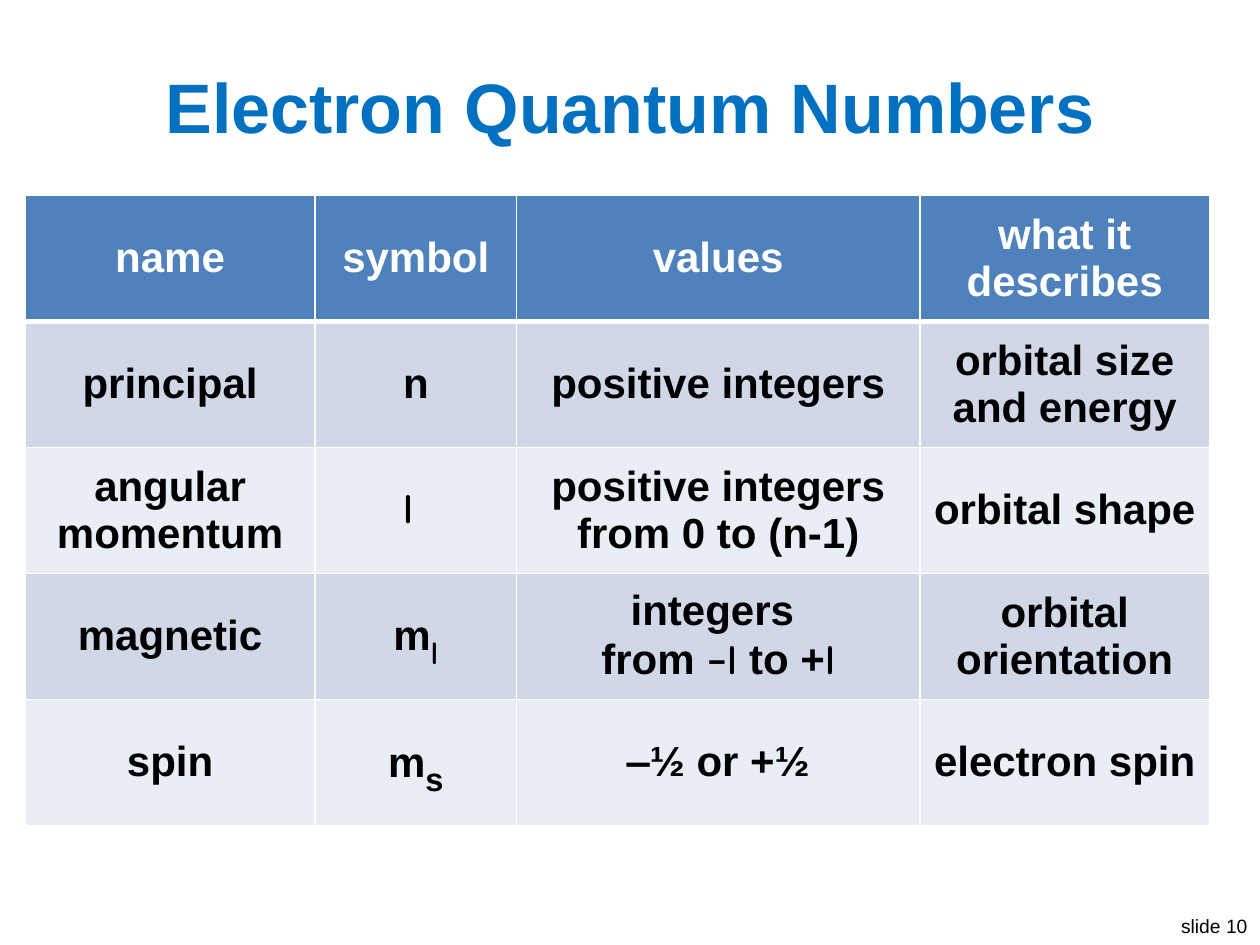
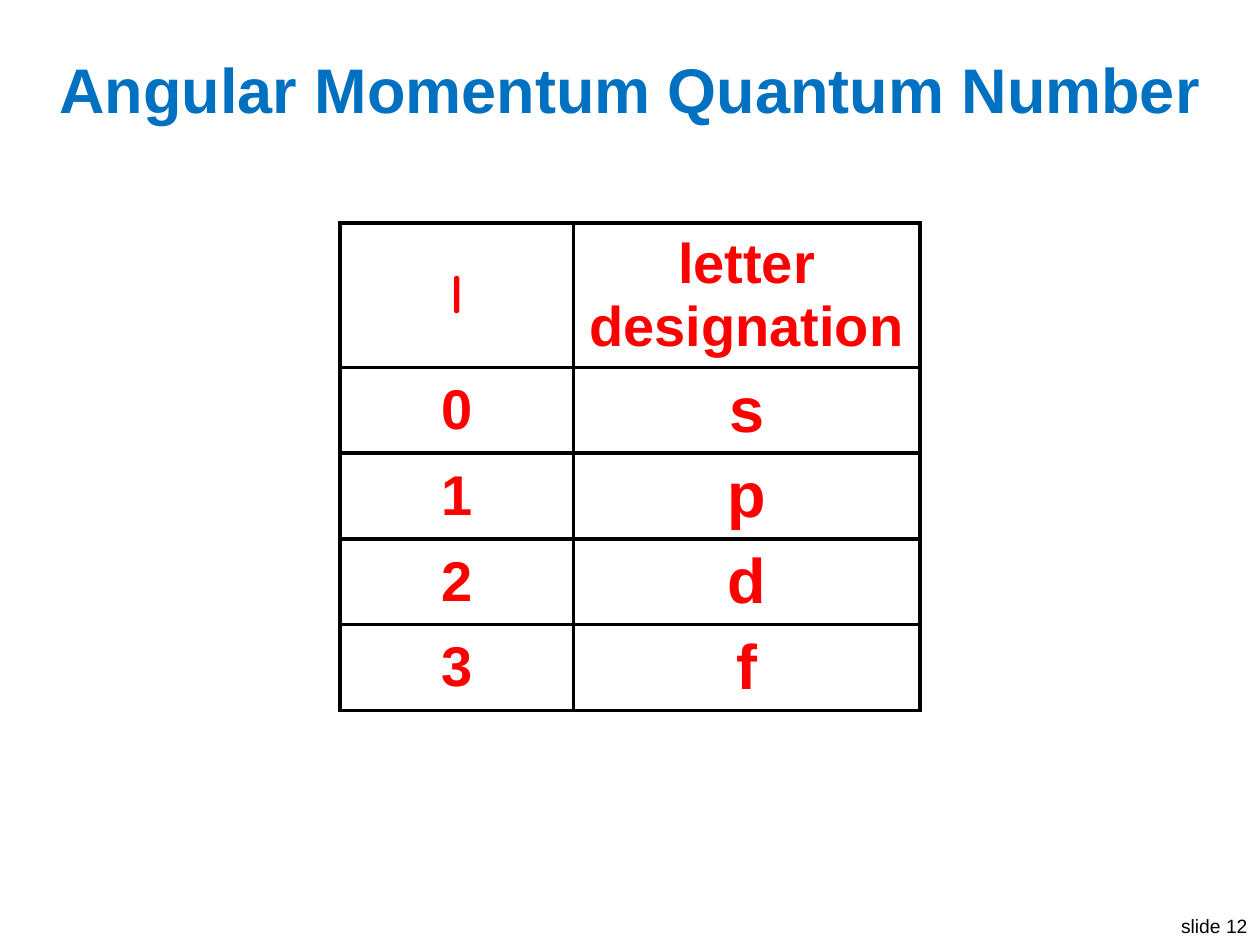
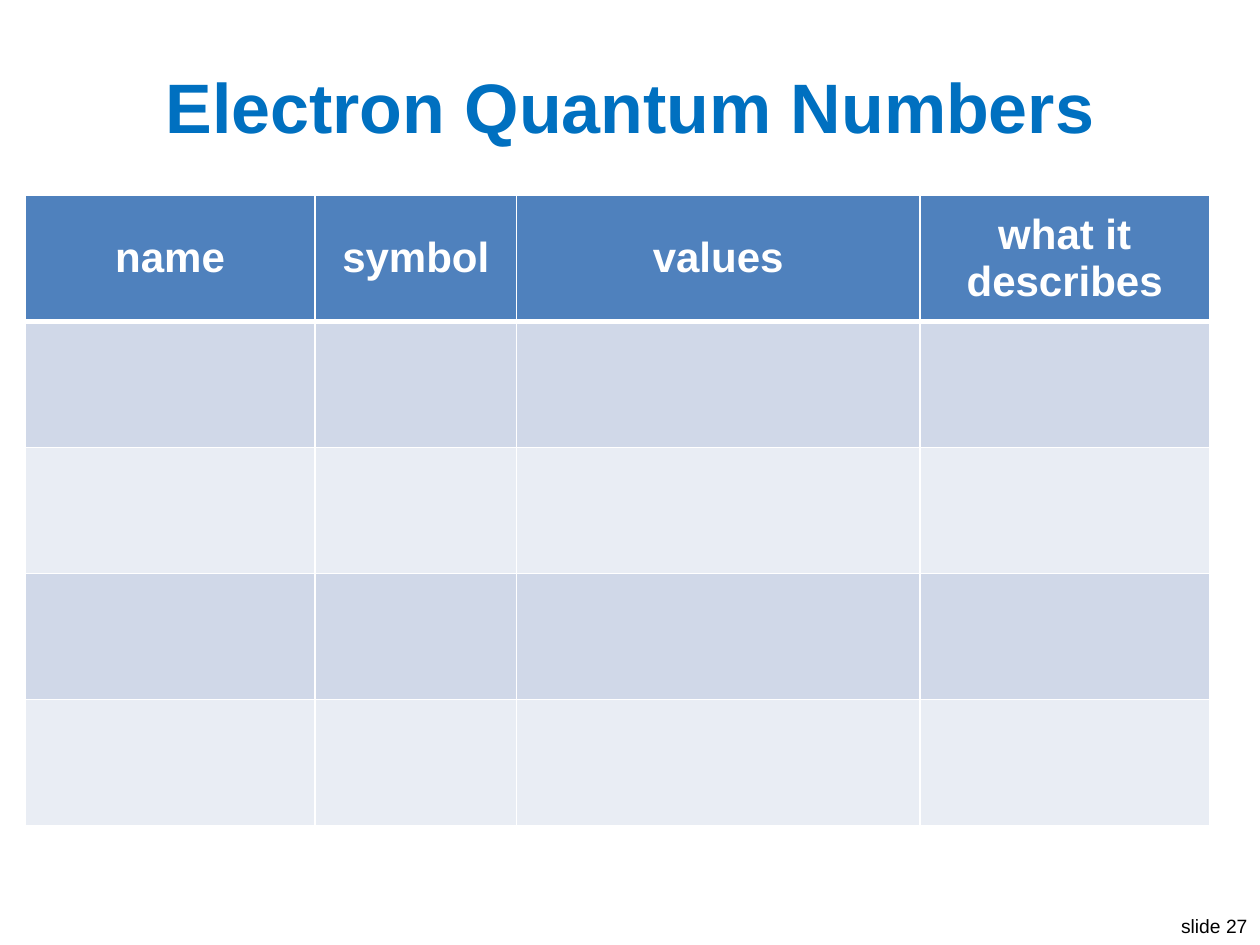
from lxml.etree import SubElement
from pptx import Presentation
from pptx.dml.color import RGBColor
from pptx.enum.text import MSO_ANCHOR as Anchor, MSO_AUTO_SIZE as AutoSize, PP_ALIGN as Align
from pptx.oxml.ns import qn
from pptx.util import Inches, Pt

# Shared look
BLACK, WHITE, RED = "000000", "FFFFFF", "FF0000"
TITLE_BLUE, HEADER_BLUE = "0070C0", "4F81BD"
BANDS = ["D0D8E8", "E9EDF4"]
BODY_FONT, LETTER_FONT, DASH_FONT = "Arial", "Comic Neue", "Calibri"
TITLE_ONLY = 5

# Marked pieces of text: (text, format that differs from its surroundings)
ELL = ("l", {"font": LETTER_FONT})
SUBSCRIPT = {"size": 32, "baseline": -25}

HEADINGS = ["name", "symbol", "values", "what it describes"]
QUANTUM_NUMBERS = [
    ["principal", "n", "positive integers", "orbital size and energy"],
    ["angular momentum", [[("l ", {"font": LETTER_FONT})]],
     "positive integers from 0 to (n-1)", "orbital shape"],
    ["magnetic", [["m", ("l", {"font": LETTER_FONT, **SUBSCRIPT})]],
     [["integers "], ["from ", ("‒", {"font": DASH_FONT}), ELL, " to +", ELL]],
     "orbital orientation"],
    ["spin", [["m", ("s", SUBSCRIPT)]], "‒½ or +½", "electron spin"],
]
LETTERS = "spdf"


def rgb(value):
    return RGBColor.from_string(value)


def write(frame, content, align=Align.CENTER, **style):
    """Write a string, or paragraphs that are lists of plain or marked pieces."""
    paragraphs = [[content]] if isinstance(content, str) else content
    for number, pieces in enumerate(paragraphs):
        paragraph = frame.add_paragraph() if number else frame.paragraphs[0]
        paragraph.alignment = align
        for piece in pieces:
            text, changes = (piece, {}) if isinstance(piece, str) else piece
            add_run(paragraph, text, **{**style, **changes})


def add_run(paragraph, text, size=24, font=BODY_FONT, color=BLACK, bold=True, baseline=0):
    run = paragraph.add_run()
    run.text = text
    run.font.size, run.font.name, run.font.bold = Pt(size), font, bold
    run.font.color.rgb = rgb(color)
    if baseline:
        run.font._element.set("baseline", str(baseline * 1000))


def set_borders(cell, color, width, bottom=None):
    properties = cell._tc.get_or_add_tcPr()
    for side in "LRTB":
        points = bottom if side == "B" and bottom else width
        line = SubElement(properties, qn(f"a:ln{side}"), w=str(Pt(points)))
        fill = SubElement(line, qn("a:solidFill"))
        SubElement(fill, qn("a:srgbClr"), val=color)


def add_grid(slide, left, top, widths, heights):
    table = slide.shapes.add_table(
        len(heights), len(widths), Inches(left), Inches(top),
        Inches(sum(widths)), Inches(sum(heights))).table
    table.first_row = table.horz_banding = False
    for column, width in zip(table.columns, widths):
        column.width = Inches(width)
    for row, height in zip(table.rows, heights):
        row.height = Inches(height)
    for cell in table.iter_cells():
        cell.vertical_anchor = Anchor.MIDDLE
    return table


def add_titled_slide(deck, heading, page, top, size):
    slide = deck.slides.add_slide(deck.slide_layouts[TITLE_ONLY])
    # Title
    title = slide.shapes.title
    title.left, title.top = Inches(0.2), Inches(top)
    title.width, title.height = Inches(9.6), Inches(0.8)
    frame = title.text_frame
    frame.auto_size, frame.vertical_anchor = AutoSize.NONE, Anchor.MIDDLE
    write(frame, heading, size=size, color=TITLE_BLUE)
    # Page label in the bottom right corner
    label = slide.shapes.add_textbox(Inches(9.25), Inches(7.21), Inches(0.75), Inches(0.29))
    label.text_frame.word_wrap = False
    write(label.text_frame, f"slide {page}", align=Align.RIGHT, size=11, bold=False)
    return slide


def add_quantum_table(slide, rows, left, top):
    table = add_grid(slide, left, top, [2.3, 1.6, 3.2, 2.3], [1] * 5)
    for r in range(5):
        is_header = r == 0
        for c in range(4):
            cell = table.cell(r, c)
            set_borders(cell, WHITE, 1, bottom=3 if is_header else None)
            cell.fill.solid()
            cell.fill.fore_color.rgb = rgb(HEADER_BLUE if is_header else BANDS[(r - 1) % 2])
            if r < len(rows):
                write(cell.text_frame, rows[r][c], color=WHITE if is_header else BLACK)


def add_letter_table(slide, left, top):
    table = add_grid(slide, left, top, [1.85, 2.75], [1.1] + [0.66] * len(LETTERS))
    rows = [([[ELL]], "letter designation")]
    rows += [(str(number), letter) for number, letter in enumerate(LETTERS)]
    for r, row in enumerate(rows):
        for c, content in enumerate(row):
            cell = table.cell(r, c)
            cell.margin_top = cell.margin_bottom = Inches(0.04)
            set_borders(cell, BLACK, 2.25)
            cell.fill.background()
            write(cell.text_frame, content, size=36 if r and c else 32, color=RED)


def quantum_slide(deck, page, rows):
    slide = add_titled_slide(deck, "Electron Quantum Numbers", page, top=0.44, size=40)
    add_quantum_table(slide, [HEADINGS] + rows, left=0.2, top=1.55)


def letter_slide(deck, page):
    slide = add_titled_slide(deck, "Angular Momentum Quantum Number", page, top=0.3, size=36)
    add_letter_table(slide, left=2.7, top=1.77)


def main():
    deck = Presentation()
    deck.slide_width, deck.slide_height = Inches(10), Inches(7.5)
    quantum_slide(deck, 10, QUANTUM_NUMBERS)
    letter_slide(deck, 12)
    quantum_slide(deck, 27, [])
    deck.save("out.pptx")


if __name__ == "__main__":
    main()
